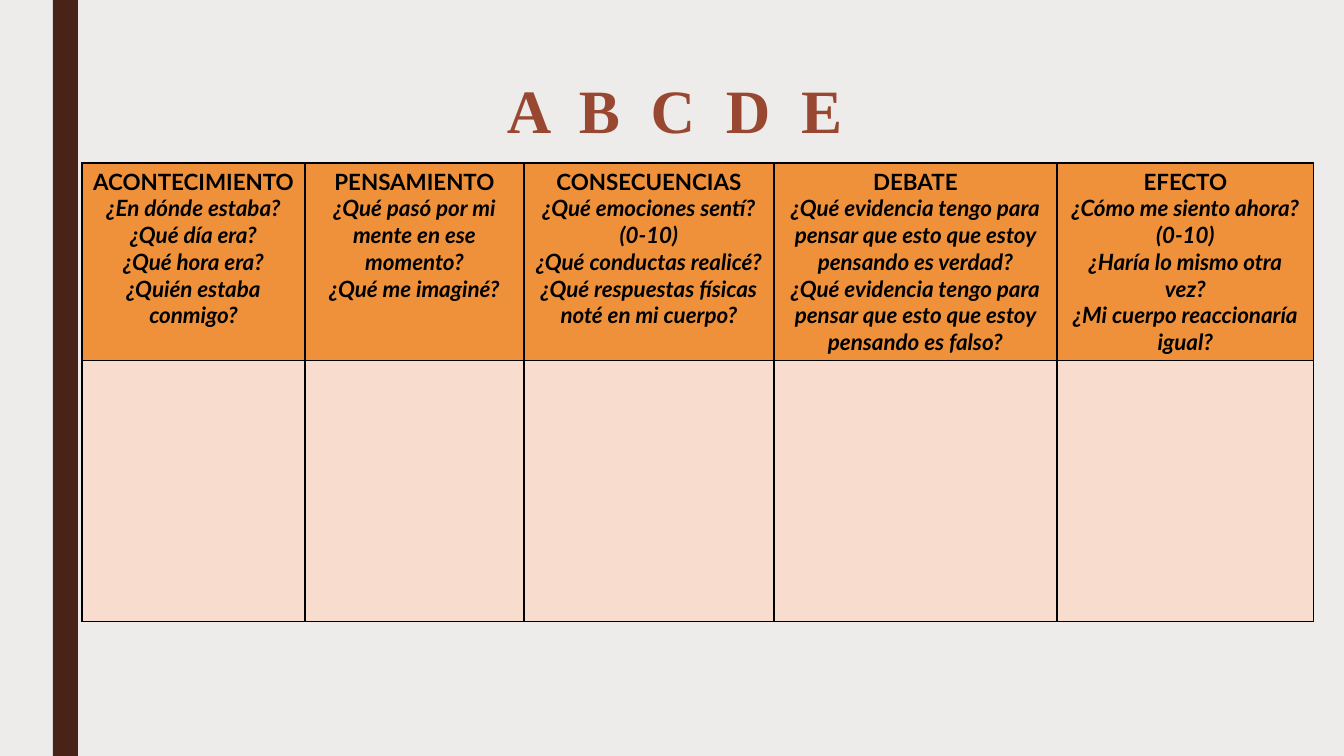
from dataclasses import dataclass

from lxml import etree
from pptx import Presentation
from pptx import util as u
from pptx.dml.color import RGBColor
from pptx.enum import shapes, text
from pptx.oxml.ns import qn

EMU_PER_PX = 914400 / 100.8


@dataclass(frozen=True)
class Theme:
    background: str = "EDECEB"
    stripe: str = "4A2318"
    title: str = "984831"
    ink: str = "000000"
    header: str = "EE913A"
    body: str = "F8DCCE"
    title_font: str = "Times New Roman"
    table_font: str = "Lato"
    title_size: int = 44
    table_size: int = 16
    border_width: int = 1


@dataclass(frozen=True)
class Column:
    width: int
    heading: str
    questions: tuple[str, ...]


THEME = Theme()
HEADER_HEIGHT, BODY_HEIGHT = 197, 261
COLUMNS = (
    Column(223, "ACONTECIMIENTO", (
        "¿En dónde estaba?", "¿Qué día era?", "¿Qué hora era?",
        "¿Quién estaba conmigo?")),
    Column(219, "PENSAMIENTO", (
        "¿Qué pasó por mi mente en ese momento?", "¿Qué me imaginé?")),
    Column(250, "CONSECUENCIAS", (
        "¿Qué emociones sentí?", "(0-10)", "¿Qué conductas realicé?",
        "¿Qué respuestas físicas noté en mi cuerpo?")),
    Column(283, "DEBATE", tuple(
        f"¿Qué evidencia tengo para pensar que esto que estoy pensando es {verdict}?"
        for verdict in ("verdad", "falso"))),
    Column(257, "EFECTO", (
        "¿Cómo me siento ahora? (0-10)", "¿Haría lo mismo otra vez?",
        "¿Mi cuerpo reaccionaría igual?")),
)


def px(length: int) -> u.Emu:
    return u.Emu(round(length * EMU_PER_PX))


def paint(fill, color: str) -> None:
    fill.solid()
    fill.fore_color.rgb = RGBColor.from_string(color)


def style_font(font, name: str, size: int, color: str, italic: bool = False) -> None:
    font.name, font.size = name, u.Pt(size)
    font.bold, font.italic = True, italic
    font.color.rgb = RGBColor.from_string(color)


def add_borders(cell) -> None:
    """Outline all four sides; the lines must precede the cell's fill."""
    properties = cell._tc.get_or_add_tcPr()
    for position, side in enumerate(("lnL", "lnR", "lnT", "lnB")):
        line = etree.Element(qn(f"a:{side}"), w=str(u.Pt(THEME.border_width)))
        fill = etree.SubElement(line, qn("a:solidFill"))
        etree.SubElement(fill, qn("a:srgbClr"), val=THEME.ink)
        properties.insert(position, line)


def add_stripe(page) -> None:
    stripe = page.shapes.add_shape(
        shapes.MSO_SHAPE.RECTANGLE, px(53), px(0), px(25), px(756))
    stripe.shadow.inherit = False
    paint(stripe.fill, THEME.stripe)
    stripe.line.fill.background()


def add_title(page) -> None:
    box = page.shapes.add_textbox(px(497), px(65), px(404), px(87))
    frame = box.text_frame
    frame.word_wrap = True
    frame.vertical_anchor = text.MSO_ANCHOR.BOTTOM
    para = frame.paragraphs[0]
    para.text = "A  B  C  D  E"
    para.line_spacing = 0.9
    style_font(para.font, THEME.title_font, THEME.title_size, THEME.title)


def fill_header(cell, column: Column) -> None:
    frame = cell.text_frame
    frame.text = "\n".join((column.heading, *column.questions))
    for index, para in enumerate(frame.paragraphs):
        para.alignment = text.PP_ALIGN.CENTER
        style_font(para.font, THEME.table_font, THEME.table_size, THEME.ink,
                   italic=index > 0)


def add_record_table(page) -> None:
    heights = (HEADER_HEIGHT, BODY_HEIGHT)
    width = sum(column.width for column in COLUMNS)
    table = page.shapes.add_table(
        len(heights), len(COLUMNS), px(82), px(163), px(width), px(sum(heights))).table
    for row, height in zip(table.rows, heights):
        row.height = px(height)
    for index, column in enumerate(COLUMNS):
        table.columns[index].width = px(column.width)
        for row, color in enumerate((THEME.header, THEME.body)):
            cell = table.cell(row, index)
            paint(cell.fill, color)
            add_borders(cell)
        fill_header(table.cell(0, index), column)


def main() -> None:
    deck = Presentation()
    deck.slide_width, deck.slide_height = px(1344), px(756)
    page = deck.slides.add_slide(deck.slide_layouts[6])
    paint(page.background.fill, THEME.background)
    add_stripe(page)
    add_record_table(page)
    add_title(page)
    deck.save("out.pptx")


if __name__ == "__main__":
    main()
